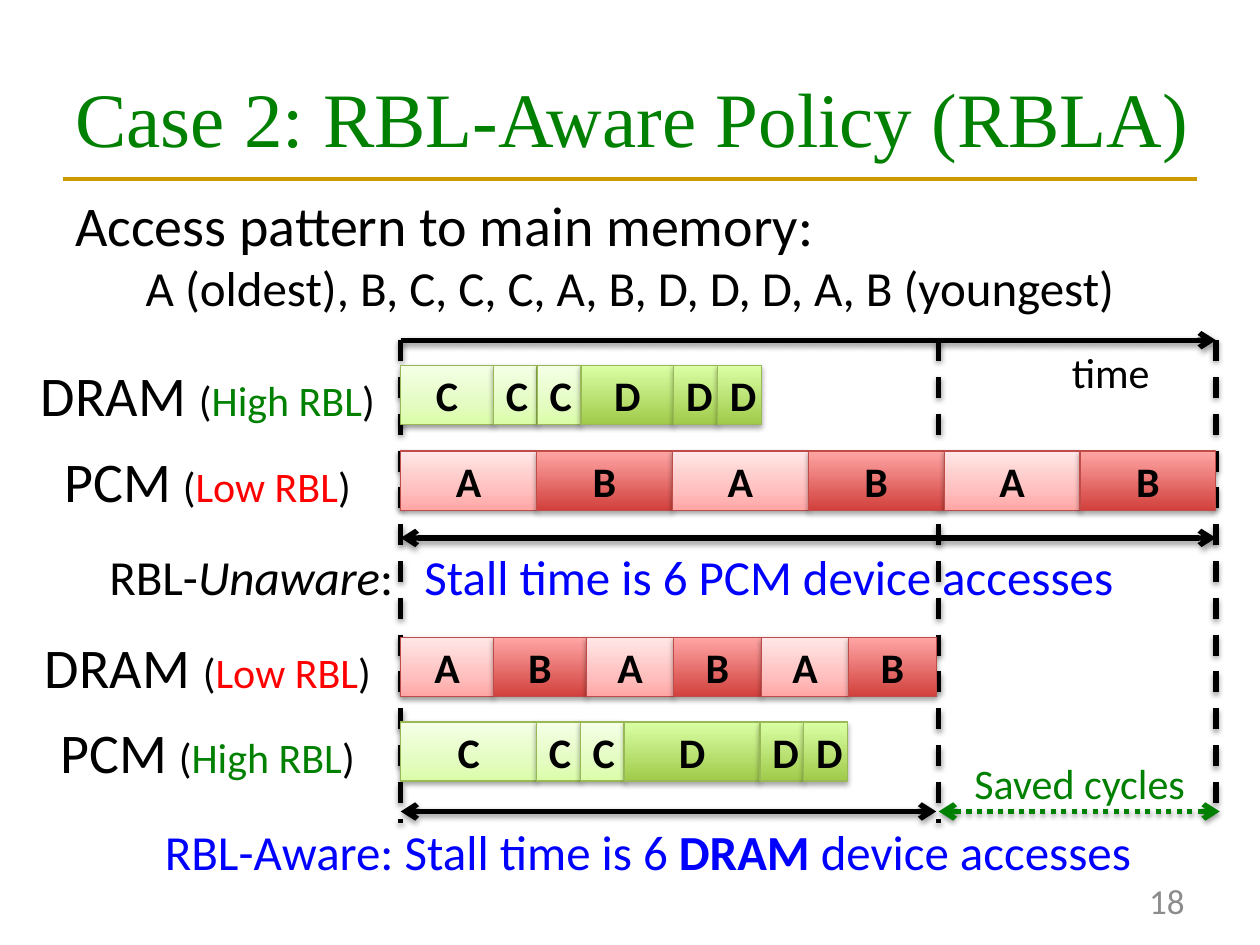
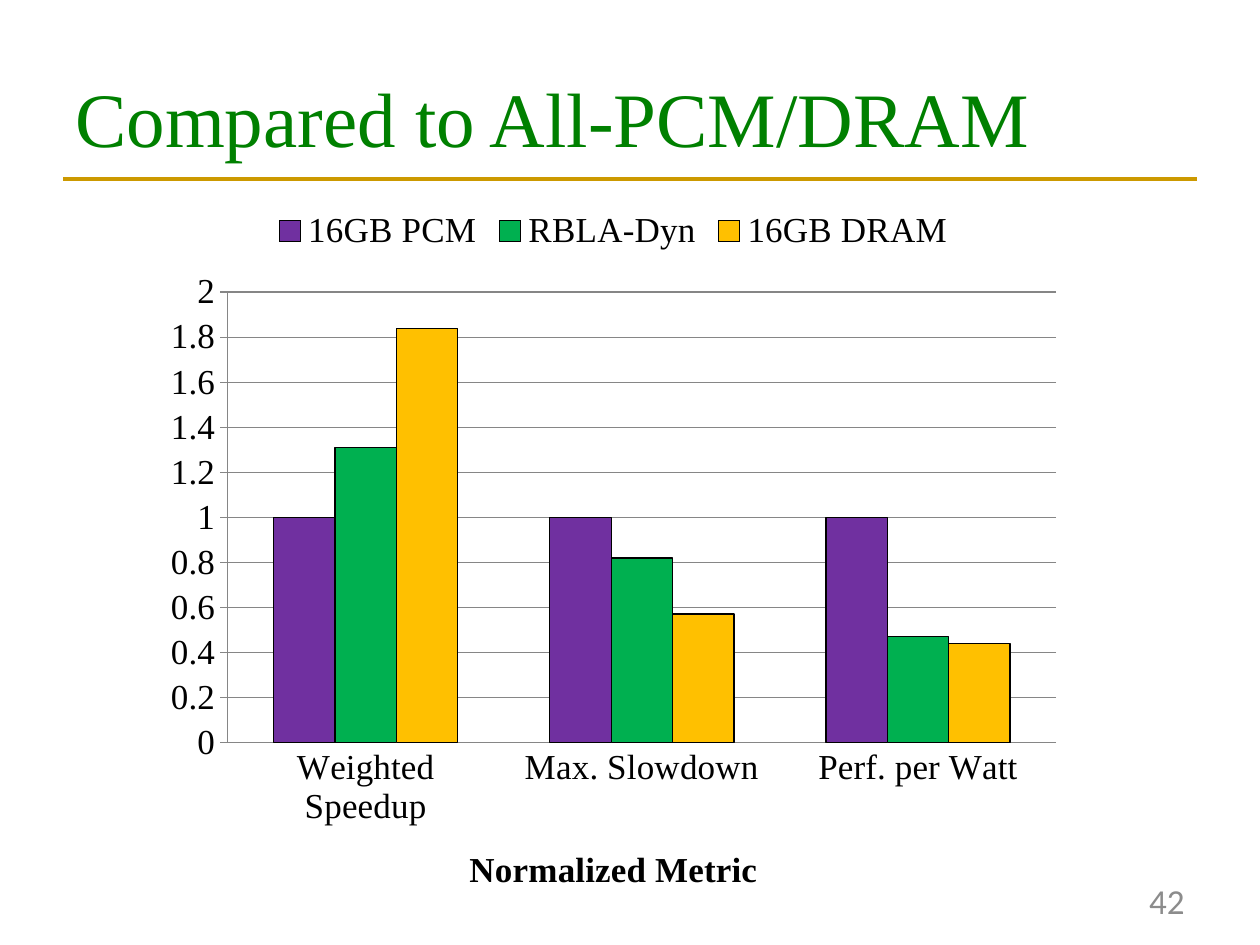
from dataclasses import dataclass
from typing import Any, NamedTuple

import pptx
import pptx.chart.data
import pptx.dml.color
import pptx.enum.chart
import pptx.enum.dml
import pptx.enum.shapes
import pptx.enum.text
import pptx.oxml.ns
import pptx.slide
import pptx.util
from lxml import etree

Pt = pptx.util.Pt
qn = pptx.oxml.ns.qn
Slide = pptx.slide.Slide
Align = pptx.enum.text.PP_ALIGN
Anchor = pptx.enum.text.MSO_ANCHOR
Dash = pptx.enum.dml.MSO_LINE


@dataclass(frozen=True)
class Theme:
    black: str = "000000"
    green: str = "008000"
    red: str = "FF0000"
    blue: str = "0000FF"
    gold: str = "CC9900"
    gray: str = "8C8C8C"
    grid: str = "868686"
    serif: str = "Times New Roman"
    sans: str = "Calibri"
    title: int = 44
    large: int = 32
    medium: int = 28
    small: int = 24
    tiny: int = 20


THEME = Theme()


class Run(NamedTuple):
    text: str
    size: float | None = None
    color: str | None = None
    bold: bool = False
    italic: bool = False


class Box(NamedTuple):
    left: float
    top: float
    width: float
    height: float


class Tone(NamedTuple):
    edge: str
    stops: tuple[tuple[int, str], ...]
    shade: int
    drop: float


class Row(NamedTuple):
    top: float
    name: str
    level: str
    color: str
    cells: str
    widths: tuple[float, ...]


class Rule(NamedTuple):
    start: tuple[float, float]
    end: tuple[float, float]
    color: str = THEME.black
    dash: Any = None
    head: bool = False
    tail: bool = False


class Bar(NamedTuple):
    name: str
    color: str
    values: tuple[float, ...]


ROSE, LIME = "BF4C48", "98B955"
TONES = {
    "A": Tone(ROSE, ((0, "FFA6A5"), (35, "FFC0BF"), (100, "FFE7E7")), 38, 1.6),
    "B": Tone(ROSE, ((0, "D1403C"), (100, "FFA6A5")), 35, 1.8),
    "C": Tone(LIME, ((0, "DAFDA7"), (35, "E4FCC2"), (100, "F5FFE7")), 38, 1.6),
    "D": Tone(LIME, ((0, "A0CA4A"), (100, "DAFFA5")), 35, 1.8),
}

START, SAVED, END = 229, 536.4, 694.8
MISS = (END - START) / 6
FAST, HIT = 53, 25
DONE = START + 2 * FAST + 4 * 50

ROWS = (
    Row(208.8, "DRAM", "High RBL", THEME.green, "CCCDDD", (FAST, HIT, HIT) * 2),
    Row(257.8, "PCM", "Low RBL", THEME.red, "ABABAB", (MISS,) * 6),
    Row(364.3, "DRAM", "Low RBL", THEME.red, "ABABAB", (FAST,) * 2 + (50,) * 4),
    Row(412.6, "PCM", "High RBL", THEME.green, "CCCDDD", (MISS, HIT, HIT) * 2),
)

TOP, FOOT = 194.4, 470.2
RULES = (
    Rule((END, TOP), (END, 465.8), dash=Dash.DASH),
    Rule((START, TOP), (START, FOOT), dash=Dash.DASH),
    Rule((SAVED, TOP), (SAVED, FOOT), dash=Dash.DASH),
    Rule((START, TOP), (END, TOP), tail=True),
    Rule((START, 307.4), (END, 307.4), head=True, tail=True),
    Rule((START, 463.7), (DONE, 463.7), head=True, tail=True),
    Rule((SAVED, 463.7), (697, 463.7), THEME.green, Dash.ROUND_DOT, True, True),
)

GROUPS = ("Weighted Speedup", "Max. Slowdown", "Perf. per Watt")
BARS = (
    Bar("16GB PCM", "7030A0", (1, 1, 1)),
    Bar("RBLA-Dyn", "00B050", (1.31, 0.82, 0.47)),
    Bar("16GB DRAM", "FFC000", (1.84, 0.57, 0.44)),
)


def rgb(code: str) -> pptx.dml.color.RGBColor:
    return pptx.dml.color.RGBColor.from_string(code)


def place(box: Box) -> list[pptx.util.Length]:
    return [Pt(side) for side in box]


def write(frame: Any, *lines: str | list[Run], size: float = THEME.small,
          color: str = THEME.black, font: str = THEME.sans, bold: bool = False,
          align: Any = Align.LEFT, anchor: Any = Anchor.TOP, wrap: bool = True) -> None:
    frame.word_wrap = wrap
    frame.vertical_anchor = anchor
    for spot, line in enumerate(lines):
        para = frame.add_paragraph() if spot else frame.paragraphs[0]
        para.alignment = align
        for part in [Run(line)] if isinstance(line, str) else line:
            run = para.add_run()
            run.text = part.text
            run.font.name = font
            run.font.size = Pt(part.size or size)
            run.font.color.rgb = rgb(part.color or color)
            run.font.bold = bold or part.bold
            run.font.italic = part.italic


def label(slide: Slide, box: Box, *lines: str | list[Run], **style: Any) -> Any:
    frame = slide.shapes.add_textbox(*place(box)).text_frame
    write(frame, *lines, **style)
    return frame


def tint(parent: Any, code: str) -> Any:
    return etree.SubElement(parent, qn("a:srgbClr"), val=code)


def shadow(shape: Any, shade: int, drop: float) -> None:
    props = shape._element.spPr
    list_ = props.find(qn("a:effectLst"))
    if list_ is None:
        list_ = etree.SubElement(props, qn("a:effectLst"))
    cast = etree.SubElement(list_, qn("a:outerShdw"), blurRad=str(Pt(3.1)),
                            dist=str(Pt(drop)), dir="5400000", rotWithShape="0")
    etree.SubElement(tint(cast, THEME.black), qn("a:alpha"), val=str(shade * 1000))


def stroke(slide: Slide, rule: Rule, width: float = 3, cast: bool = True) -> None:
    line = slide.shapes.add_connector(pptx.enum.shapes.MSO_CONNECTOR.STRAIGHT,
                                      *map(Pt, rule.start + rule.end))
    line.line.color.rgb = rgb(rule.color)
    line.line.width = Pt(width)
    if rule.dash:
        line.line.dash_style = rule.dash
    props = line._element.spPr
    for shown, tag in ((rule.head, "a:headEnd"), (rule.tail, "a:tailEnd")):
        if shown:
            etree.SubElement(props.find(qn("a:ln")), qn(tag), type="arrow")
    if cast:
        shadow(line, 38, 1.6)
    else:
        etree.SubElement(props, qn("a:effectLst"))


def block(slide: Slide, box: Box, letter: str) -> None:
    tone = TONES[letter]
    cell = slide.shapes.add_shape(pptx.enum.shapes.MSO_SHAPE.RECTANGLE, *place(box))
    cell.shadow.inherit = False
    cell.fill.gradient()
    cell.fill.gradient_angle = 90
    stops = cell._element.spPr.find(qn("a:gradFill")).find(qn("a:gsLst"))
    stops.clear()
    for where, code in tone.stops:
        tint(etree.SubElement(stops, qn("a:gs"), pos=str(where * 1000)), code)
    cell.line.color.rgb = rgb(tone.edge)
    cell.line.width = Pt(0.75)
    shadow(cell, tone.shade, tone.drop)
    write(cell.text_frame, letter, bold=True, align=Align.CENTER, anchor=Anchor.MIDDLE)


def track(slide: Slide, row: Row) -> None:
    left = START
    for letter, width in zip(row.cells, row.widths):
        block(slide, Box(left, row.top, width, 33.8), letter)
        left += width
    gap = THEME.large if row.name == "DRAM" else THEME.medium
    label(slide, Box(14.4, row.top - 6.2, 208.8, 46),
          [Run(row.name, THEME.large), Run(" ", gap), Run("("),
           Run(row.level, color=row.color), Run(")")], align=Align.CENTER)


def begin(deck: Any, title: str, number: str, width: float = 648) -> Slide:
    slide = deck.slides.add_slide(deck.slide_layouts[6])
    stroke(slide, Rule((36, 102.2), (684, 102.2), THEME.gold), 2.25, False)
    label(slide, Box(36, 21.6, width, 90), title, size=THEME.title,
          color=THEME.green, font=THEME.serif, anchor=Anchor.MIDDLE)
    label(slide, Box(516, 500.4, 168, 28.8), number, size=THEME.tiny,
          color=THEME.gray, align=Align.RIGHT, anchor=Anchor.MIDDLE)
    return slide


def policy(deck: Any) -> None:
    slide = begin(deck, "Case 2: RBL-Aware Policy (RBLA)", "18", 684)
    for rule in RULES:
        stroke(slide, rule)
    for row in ROWS:
        track(slide, row)
    pattern = Box(36, 105.1, 648, 82)
    frame = label(slide, pattern, "Access pattern to main memory:",
                  [Run("A (oldest), B, C, C, C, A, B, D, D, D, A, B (youngest)", THEME.medium)],
                  size=THEME.large)
    frame.paragraphs[1].alignment = Align.CENTER
    label(slide, Box(604.8, 194.4, 59.8, 36), "time", align=Align.CENTER, wrap=False)
    label(slide, Box(548.6, 429.1, 136.8, 36), "Saved cycles", color=THEME.green,
          align=Align.CENTER, wrap=False)
    frame = label(slide, Box(55.4, 308.9, 640, 41),
                  [Run("RBL-"), Run("Unaware", italic=True), Run(":\t"),
                   Run("Stall time is 6 PCM device accesses", color=THEME.blue)],
                  size=THEME.medium)
    tabs = etree.SubElement(frame.paragraphs[0]._p.get_or_add_pPr(), qn("a:tabLst"))
    etree.SubElement(tabs, qn("a:tab"), pos=str(Pt(180)), algn="l")
    label(slide, Box(87.1, 465.8, 609.8, 41),
          [Run("RBL-Aware: Stall time is 6 "), Run("DRAM", bold=True),
           Run(" device accesses")], size=THEME.medium, color=THEME.blue)


def results(deck: Any) -> None:
    slide = begin(deck, "Compared to All-PCM/DRAM", "42")
    kinds = pptx.enum.chart
    data = pptx.chart.data.CategoryChartData()
    data.categories = GROUPS
    for bar in BARS:
        data.add_series(bar.name, bar.values)
    chart = slide.shapes.add_chart(kinds.XL_CHART_TYPE.COLUMN_CLUSTERED,
                                   *place(Box(87.1, 111.6, 527, 415.4)), data).chart
    chart.font.name = THEME.serif
    chart.font.size = Pt(THEME.tiny)
    chart.font.color.rgb = rgb(THEME.black)
    chart.has_title = False
    chart.has_legend = True
    chart.legend.position = kinds.XL_LEGEND_POSITION.TOP
    chart.legend.include_in_layout = False
    plot = chart.plots[0]
    plot.gap_width, plot.overlap, plot.vary_by_categories = 150, 0, False
    for bar, series in zip(BARS, plot.series):
        series.format.fill.solid()
        series.format.fill.fore_color.rgb = rgb(bar.color)
        series.format.line.color.rgb = rgb(THEME.black)
        series.format.line.width = Pt(0.75)
    across, up = chart.category_axis, chart.value_axis
    across.major_tick_mark = kinds.XL_TICK_MARK.NONE
    write(across.axis_title.text_frame, "Normalized Metric", size=THEME.tiny,
          font=THEME.serif, bold=True, align=Align.CENTER)
    up.minimum_scale, up.maximum_scale, up.major_unit = 0, 2, 0.2
    up.major_tick_mark = kinds.XL_TICK_MARK.OUTSIDE
    up.has_major_gridlines = True
    for part in (across, up, up.major_gridlines):
        part.format.line.color.rgb = rgb(THEME.grid)
        part.format.line.width = Pt(0.75)


def main() -> None:
    deck = pptx.Presentation()
    deck.slide_width, deck.slide_height = Pt(720), Pt(540)
    policy(deck)
    results(deck)
    deck.save("out.pptx")


if __name__ == "__main__":
    main()
